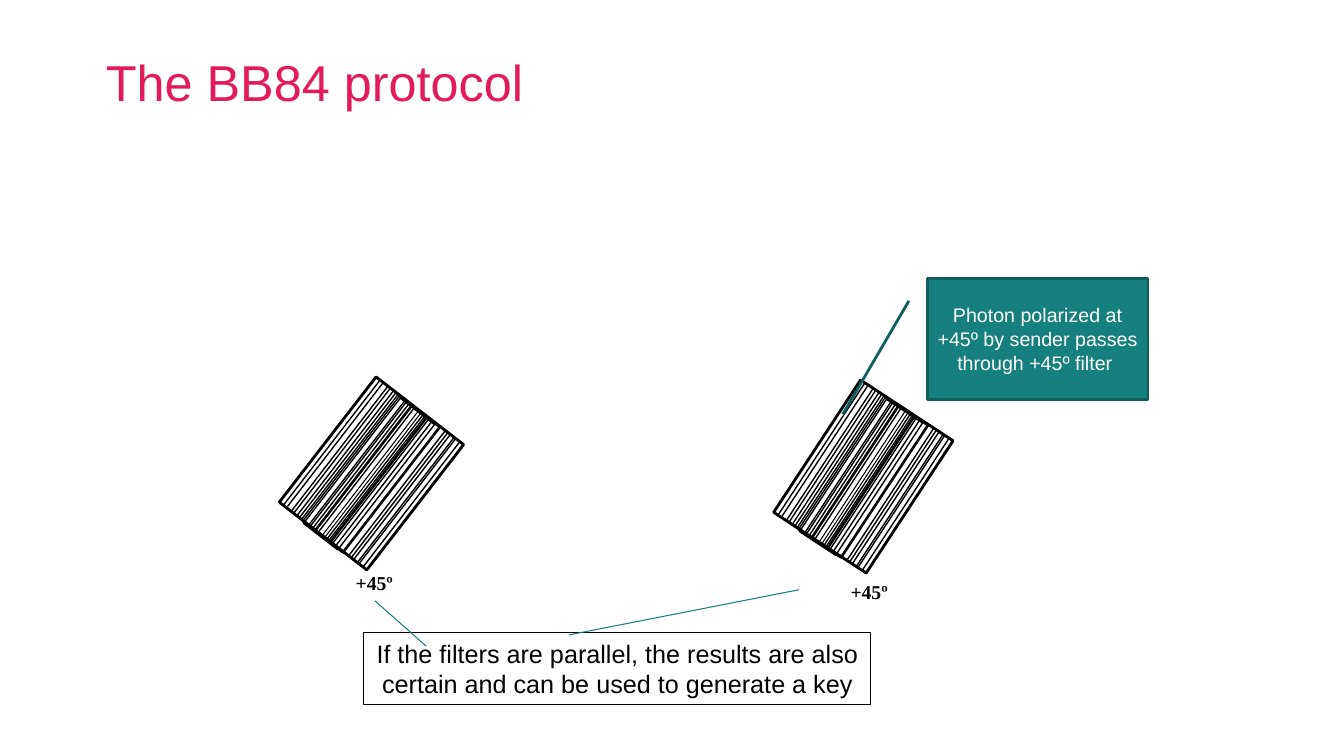
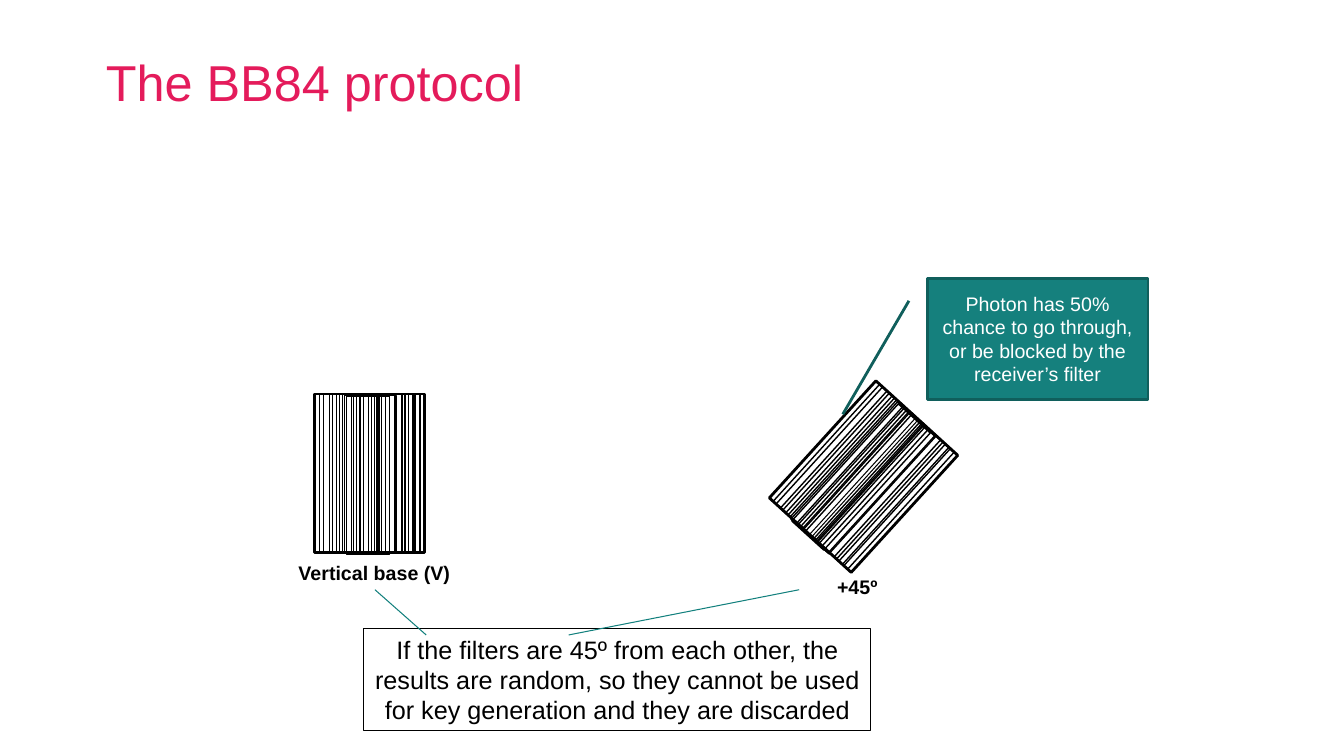
from pptx import Presentation
from pptx import util as u
from pptx.dml.color import RGBColor
from pptx.enum import shapes, text
from lxml import etree

DRAWING = "http://schemas.openxmlformats.org/drawingml/2006/main"

# Slats of a polarizing filter, in cm from its corner: left, top, width
SLATS = [
    (0, 0, 2.79), (0.13, 0, 2.54), (0.23, 0, 2.31), (0.38, 0, 2.11),
    (0.46, 0, 1.91), (0.56, 0, 1.73), (0.64, 0, 1.57), (0.76, 0.03, 1.3),
    (0.94, 0.03, 1.09), (0.81, 0.05, 1.09), (0.71, 0, 1.09), (0.99, 0.03, 0.71),
    (1.07, 0, 0.58), (1.14, 0, 0.48), (1.17, 0.03, 0.41), (1.24, 0, 0.28),
]
CENTRE_LINES = (1.37, 1.45)
FILTER_HEIGHT = 3.99
LEADER_RISE = 1.14


def color(hex_string):
    return RGBColor.from_string(hex_string)


class Deck:
    PINK, TEAL, DARK_TEAL, LEADER = "E41B5B", "15807D", "105F5C", "12807D"
    BLACK, WHITE = "000000", "FFFFFF"

    def __init__(self):
        self.presentation = Presentation()
        self.presentation.slide_width = u.Cm(33.87)
        self.presentation.slide_height = u.Cm(19.05)
        self.slide = None

    def new_slide(self, title):
        self.slide = self.presentation.slides.add_slide(self.presentation.slide_layouts[6])
        box = self.slide.shapes.add_textbox(*map(u.Cm, (2.67, 1.12, 29.03, 2.57)))
        frame = box.text_frame
        frame.margin_left = frame.margin_right = frame.margin_bottom = 0
        frame.margin_top = u.Cm(0.18)
        self.set_text(box, title, 36, self.PINK, align=text.PP_ALIGN.LEFT)

    def set_text(self, shape, words, size, hex_string, font="Arial", bold=False,
                 align=text.PP_ALIGN.CENTER, anchor=text.MSO_ANCHOR.TOP):
        frame = shape.text_frame
        frame.word_wrap = True
        frame.vertical_anchor = anchor
        paragraph = frame.paragraphs[0]
        paragraph.text = words
        paragraph.alignment = align
        paragraph.font.name = font
        paragraph.font.size = u.Pt(size)
        paragraph.font.bold = bold
        paragraph.font.color.rgb = color(hex_string)

    def box(self, parent, kind, bounds, line, width, fill=None):
        """Add a preset shape to a slide's or a group's shapes."""
        shape = parent.add_shape(kind, *map(u.Cm, bounds))
        shape.shadow.inherit = False
        if fill:
            shape.fill.solid()
            shape.fill.fore_color.rgb = color(fill)
        else:
            shape.fill.background()
        shape.line.color.rgb = color(line)
        shape.line.width = u.Pt(width)
        return shape

    def line(self, parent, ends, hex_string):
        connector = parent.add_connector(shapes.MSO_CONNECTOR.STRAIGHT, *map(u.Cm, ends))
        connector.line.color.rgb = color(hex_string)
        connector.line.width = u.Pt(0.75)
        etree.SubElement(connector._element.spPr, f"{{{DRAWING}}}effectLst")

    def polarizer(self, left, top, angle):
        group = self.slide.shapes.add_group_shape()
        for index, (dx, dy, width) in enumerate(SLATS):
            self.box(group.shapes, shapes.MSO_SHAPE.RECTANGLE,
                     (left + dx, top + dy, width, FILTER_HEIGHT),
                     self.BLACK, 1 if index else 2)
        for dx in CENTRE_LINES:
            x = left + dx
            self.line(group.shapes, (x, top, x, top + FILTER_HEIGHT), self.BLACK)
        group.rotation = angle

    def label(self, left, top, words, font):
        box = self.slide.shapes.add_textbox(*map(u.Cm, (left, top, 4.75, 0.86)))
        self.set_text(box, words, 14, self.BLACK, font, bold=True)

    def note(self, top, height, words, leader_y):
        """Add the framed conclusion and its leaders to both filters."""
        frame = self.box(self.slide.shapes, shapes.MSO_SHAPE.RECTANGLE,
                         (9.17, top, 12.78, height), self.BLACK, 0.75)
        self.set_text(frame, words, 18, self.BLACK)
        for x1, y, x2 in ((10.74, leader_y, 9.45), (14.33, 16, 20.14)):
            self.line(self.slide.shapes, (x1, y, x2, y - LEADER_RISE), self.LEADER)

    def callout(self, words):
        shape = self.box(self.slide.shapes, shapes.MSO_SHAPE.LINE_CALLOUT_1,
                         (23.37, 7.01, 5.56, 3.05), self.DARK_TEAL, 2, self.TEAL)
        self.set_text(shape, words, 14, self.WHITE, anchor=text.MSO_ANCHOR.MIDDLE)


def main():
    deck = Deck()
    title = "The BB84 protocol"

    deck.new_slide(title)
    deck.polarizer(7.95, 9.93, 37.7)
    deck.polarizer(20.35, 10.01, 33.3)
    deck.label(7.06, 14.27, "+45º", "Times New Roman")
    deck.label(19.53, 14.48, "+45º", "Times New Roman")
    deck.note(15.95, 1.8, "If the filters are parallel, the results are also certain "
              "and can be used to generate a key", 16.28)
    deck.callout("Photon polarized at +45º by sender passes through +45º filter ")

    deck.new_slide(title)
    deck.polarizer(7.92, 9.93, 0)
    deck.polarizer(20.35, 10.01, 42.3)
    deck.label(7.06, 14, "Vertical base (V)", "Arial")
    deck.label(19.23, 14.35, "+45º", "Arial")
    deck.note(15.85, 2.57, "If the filters are 45º from each other, the results are random, "
              "so they cannot be used for key generation and they are discarded", 16)
    deck.callout("Photon has 50% chance to go through, or be blocked by the receiver’s filter")

    deck.presentation.save("out.pptx")


if __name__ == "__main__":
    main()
